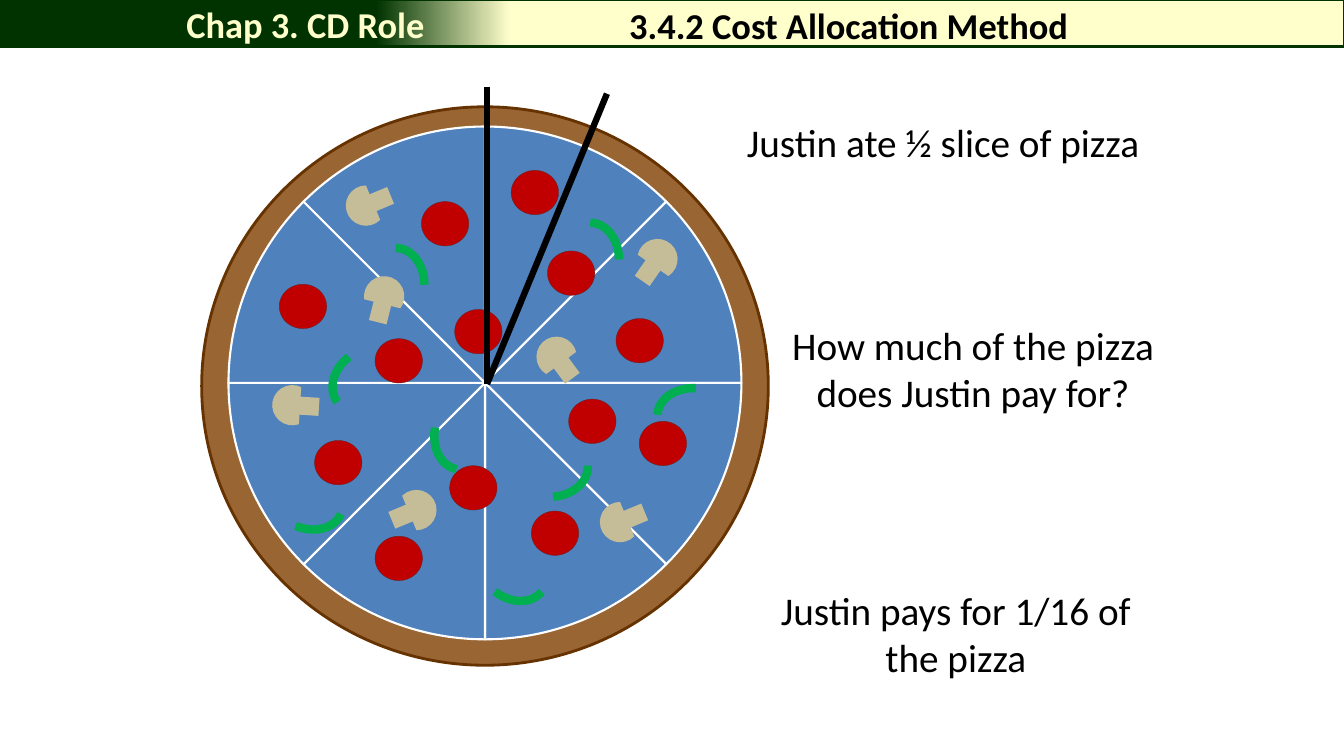
from dataclasses import dataclass
from math import cos, radians, sin

from lxml import etree
from pptx import Presentation
from pptx.chart.data import CategoryChartData
from pptx.dml.color import RGBColor
from pptx.enum.chart import XL_CHART_TYPE
from pptx.enum.shapes import MSO_CONNECTOR, MSO_SHAPE
from pptx.enum.text import MSO_ANCHOR, PP_ALIGN
from pptx.oxml.ns import qn
from pptx.util import Inches, Pt

RECT, OVAL = MSO_SHAPE.RECTANGLE, MSO_SHAPE.OVAL
CHORD, ARC = MSO_SHAPE.CHORD, MSO_SHAPE.ARC
STRAIGHT = MSO_CONNECTOR.STRAIGHT
PIE = XL_CHART_TYPE.PIE
LEFT, CENTER = PP_ALIGN.LEFT, PP_ALIGN.CENTER
TOP, MIDDLE = MSO_ANCHOR.TOP, MSO_ANCHOR.MIDDLE


@dataclass(frozen=True)
class Theme:
    """Colours, font and type sizes of the slide."""
    font: str = "Calibri"
    heading: int = 26
    body: int = 28
    label: int = 10
    ink: str = "000000"
    white: str = "FFFFFF"
    dark: str = "003300"
    cream: str = "FFFFCC"
    crust: str = "996633"
    crust_edge: str = "663300"
    cheese: str = "F79646"
    pepperoni: str = "C00000"
    pepperoni_edge: str = "632523"
    mushroom: str = "C4BD97"
    pepper: str = "00B050"


THEME = Theme()
PEPPERONI = [
    (2.77, 2.82), (4.18, 2), (3.72, 3.36), (3.12, 4.37), (4.46, 4.62),
    (5.43, 2.49), (5.07, 1.69), (5.27, 5.07), (5.64, 3.96), (6.11, 3.16),
    (4.51, 3.07), (3.72, 5.32), (6.34, 4.18),
]
MUSHROOMS = [
    (3.43, 1.84, 0), (3.61, 2.74, 126.5), (5.95, 4.98, 0), (2.7, 3.82, 26.1),
    (6.32, 2.37, 147.3), (3.93, 4.86, 180), (5.32, 3.34, 76),
]
PEPPERS = [
    (3.64, 2.46, 0), (4.8, 5.28, 128.2), (3.35, 3.4, 232.3), (6.6, 3.77, 273.4),
    (4.31, 3.93, 190.7), (5.57, 2.21, 0), (2.76, 4.59, 113.3), (5.18, 4.28, 85.9),
]
SLICE_COUNT = 8
PIZZA_CENTER = (4.83, 3.81)
CUT_ENDS = [(4.83, 0.86), (6.02, 0.93)]


def rgb(code):
    """Turn a hex code into a colour."""
    return RGBColor.from_string(code)


def add_figure(slide, kind, box, fill=None, line=None, width=1, rotation=0):
    """Add a preset shape with a plain fill and outline."""
    figure = slide.shapes.add_shape(kind, *map(Inches, box))
    figure.shadow.inherit = False
    figure.rotation = rotation
    if fill:
        figure.fill.solid()
        figure.fill.fore_color.rgb = rgb(fill)
    else:
        figure.fill.background()
    if line:
        figure.line.color.rgb = rgb(line)
        figure.line.width = Pt(width)
    else:
        figure.line.fill.background()
    return figure


def add_text(slide, text, box, size=THEME.body, color=THEME.ink, bold=False,
             align=CENTER, anchor=TOP):
    """Add a wrapped text box with one formatted paragraph."""
    frame = slide.shapes.add_textbox(*map(Inches, box)).text_frame
    frame.word_wrap = True
    frame.vertical_anchor = anchor
    paragraph = frame.paragraphs[0]
    paragraph.alignment = align
    run = paragraph.add_run()
    run.text = text
    run.font.name = THEME.font
    run.font.size = Pt(size)
    run.font.bold = bold
    run.font.color.rgb = rgb(color)


def add_header(slide):
    """Add the gradient band with chapter and section titles."""
    band = add_figure(slide, RECT, (0, 0, 13.33, 0.46), line=THEME.dark, width=2)
    band.fill.gradient()
    band.fill.gradient_angle = 0
    stops = [(0.28, THEME.dark), (0.38, THEME.cream)]
    for stop, (position, color) in zip(band.fill.gradient_stops, stops):
        stop.position = position
        stop.color.rgb = rgb(color)
    heading = dict(size=THEME.heading, bold=True, anchor=MIDDLE)
    add_text(slide, "3.4.2 Cost Allocation Method", (5.17, 0, 6.5, 0.5), **heading)
    add_text(slide, "Chap 3. CD Role", (1.75, -0.01, 3.58, 0.5),
             color=THEME.cream, align=LEFT, **heading)


def fix_plot_area(chart, width, height):
    """Centre the plot area at the given share of the chart."""
    area = chart._chartSpace.find(".//" + qn("c:plotArea"))
    for old in area.findall(qn("c:layout")):
        area.remove(old)
    layout = etree.Element(qn("c:layout"))
    manual = etree.SubElement(layout, qn("c:manualLayout"))
    settings = [("layoutTarget", "inner"), ("xMode", "edge"), ("yMode", "edge"),
                ("x", (1 - width) / 2), ("y", (1 - height) / 2),
                ("w", width), ("h", height)]
    for tag, value in settings:
        setting = value if isinstance(value, str) else f"{value:.3f}"
        etree.SubElement(manual, qn("c:" + tag)).set("val", setting)
    area.insert(0, layout)


def add_slices(slide):
    """Add the pie chart of equal pizza slices."""
    data = CategoryChartData()
    data.categories = [str(number + 1) for number in range(SLICE_COUNT)]
    data.add_series("Series 1", [12] * SLICE_COUNT)
    box = map(Inches, (0.57, 1.12, 8.48, 5.36))
    chart = slide.shapes.add_chart(PIE, *box, data).chart
    chart.has_legend = False
    chart.has_title = False
    chart.font.name = THEME.font
    chart.font.size = Pt(THEME.label)
    chart.font.color.rgb = rgb(THEME.ink)
    pie = chart.plots[0]
    pie.vary_by_categories = False
    slices = pie.series[0].format
    slices.fill.solid()
    slices.fill.fore_color.rgb = rgb(THEME.cheese)
    slices.line.color.rgb = rgb(THEME.white)
    slices.line.width = Pt(1.5)
    fix_plot_area(chart, 0.6, 0.95)


def add_mushroom(slide, left, top, rotation):
    """Add a mushroom cap with its stem pointing out of the cut."""
    cap, stem_width, stem_height, reach = 0.4, 0.23, 0.18, 0.15
    add_figure(slide, CHORD, (left, top, cap, cap), THEME.mushroom, rotation=rotation)
    angle = (rotation - 22.5) % 360
    stem_left = left + (cap - stem_width) / 2 + reach * cos(radians(angle))
    stem_top = top + (cap - stem_height) / 2 + reach * sin(radians(angle))
    add_figure(slide, RECT, (stem_left, stem_top, stem_width, stem_height),
               THEME.mushroom, rotation=angle)


def add_cut(slide, start, end):
    """Add a thick cutting line."""
    cut = slide.shapes.add_connector(STRAIGHT, *map(Inches, start + end))
    cut.line.color.rgb = rgb(THEME.ink)
    cut.line.width = Pt(4.5)
    etree.SubElement(cut._element.spPr, qn("a:effectLst"))


def add_pizza(slide):
    """Add the crust, the slices, the toppings and the cuts."""
    add_figure(slide, OVAL, (2, 1.06, 5.62, 5.54), THEME.crust, THEME.crust_edge, 2)
    add_slices(slide)
    for left, top in PEPPERONI:
        add_figure(slide, OVAL, (left, top, 0.47, 0.44), THEME.pepperoni,
                   THEME.pepperoni_edge, 0.25)
    for mushroom in MUSHROOMS:
        add_mushroom(slide, *mushroom)
    for left, top, rotation in PEPPERS:
        add_figure(slide, ARC, (left, top, 0.57, 0.73), line=THEME.pepper,
                   width=6, rotation=rotation)
    for cut_end in CUT_ENDS:
        add_cut(slide, cut_end, PIZZA_CENTER)


def main():
    """Build and save the slide."""
    deck = Presentation()
    deck.slide_width, deck.slide_height = Inches(13.33), Inches(7.5)
    slide = deck.slides.add_slide(deck.slide_layouts[6])
    add_header(slide)
    add_text(slide, "Justin ate ½ slice of pizza", (7.31, 1.12, 4.15, 0.57), align=LEFT)
    add_text(slide, "Justin pays for 1/16 of the pizza", (7.41, 5.77, 4.14, 1.04))
    add_text(slide, "How much of the pizza does Justin pay for?", (7.46, 3.14, 4.38, 1.04))
    add_pizza(slide)
    deck.save("out.pptx")


if __name__ == "__main__":
    main()
